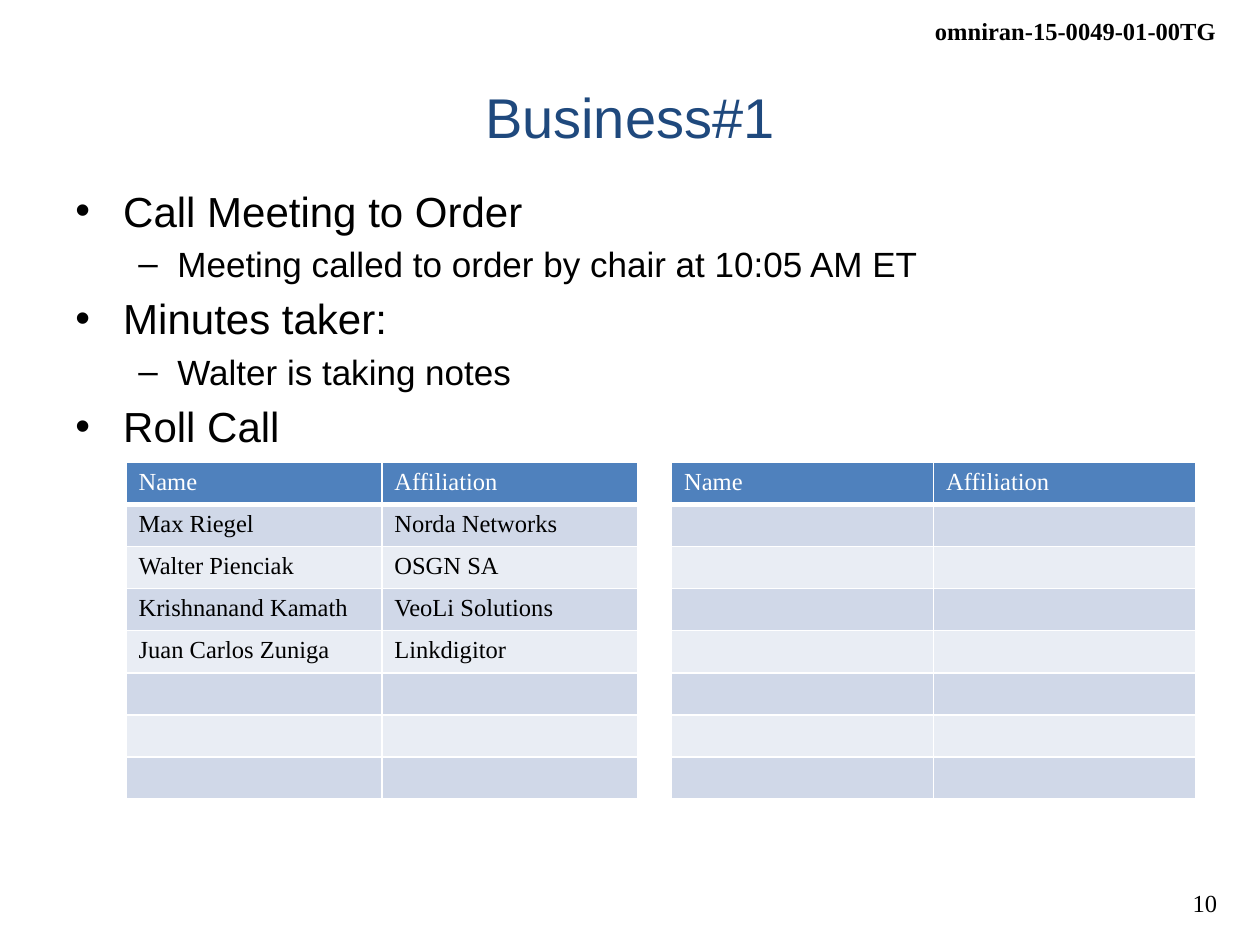
from lxml.etree import SubElement
from pptx import Presentation
from pptx.dml.color import RGBColor
from pptx.enum.text import MSO_ANCHOR, PP_ALIGN
from pptx.oxml.ns import qn
from pptx.util import Inches, Pt

SERIF, SANS = "Times New Roman", "Arial"
BLACK, WHITE, NAVY, BLUE = "000000", "FFFFFF", "1F497D", "4F81BD"
BANDS = ("D0D8E8", "E9EDF4")
LEVELS = (
    {"size": 24, "mark": "•", "left": 0.38, "hang": 0.38},
    {"size": 20, "mark": "–", "left": 0.81, "hang": 0.31},
)
AGENDA = (
    (0, "Call Meeting to Order"),
    (1, "Meeting called to order by chair at 10:05 AM ET"),
    (0, "Minutes taker:"),
    (1, "Walter is taking notes"),
    (0, "Roll Call"),
)
HEADER = ("Name", "Affiliation", "", "Name", "Affiliation")
ATTENDEES = (
    ("Max Riegel", "Norda Networks"),
    ("Walter Pienciak", "OSGN SA"),
    ("Krishnanand Kamath", "VeoLi Solutions"),
    ("Juan Carlos Zuniga", "Linkdigitor"),
)
COLUMN_WIDTHS = (2.03, 2.03, 0.27, 2.08, 2.08)
ROW_COUNT, ROW_HEIGHT, GAP_COLUMN = 8, 0.32, 2


def color(value):
    """Turn a hex string into a colour."""
    return RGBColor.from_string(value)


def write(para, text, size=14, font=SERIF, ink=BLACK, bold=False, align=PP_ALIGN.LEFT):
    """Add formatted text to a paragraph."""
    para.alignment = align
    span = para.add_run()
    span.text = text
    span.font.name, span.font.size, span.font.bold = font, Pt(size), bold
    span.font.color.rgb = color(ink)


def add_box(page, left, top, width, height, wrap=True, anchor=MSO_ANCHOR.TOP):
    """Add an empty text box and return its text frame."""
    box = page.shapes.add_textbox(Inches(left), Inches(top), Inches(width), Inches(height))
    frame = box.text_frame
    frame.word_wrap, frame.vertical_anchor = wrap, anchor
    return frame


def set_bullet(para, mark, left, hang):
    """Give a paragraph a hanging bullet and proportional space before."""
    properties = para._p.get_or_add_pPr()
    properties.set("marL", str(Inches(left)))
    properties.set("indent", str(-Inches(hang)))
    spacing = SubElement(properties, qn("a:spcBef"))
    SubElement(spacing, qn("a:spcPct"), val="20000")
    SubElement(properties, qn("a:buFont"), typeface=SANS)
    SubElement(properties, qn("a:buChar"), char=mark)


def set_borders(cell, bottom):
    """Draw white borders around a cell."""
    properties = cell._tc.get_or_add_tcPr()
    for position, (side, width) in enumerate((("L", 1), ("R", 1), ("T", 1), ("B", bottom))):
        line = SubElement(properties, qn(f"a:ln{side}"), w=str(Pt(width)))
        fill = SubElement(line, qn("a:solidFill"))
        SubElement(fill, qn("a:srgbClr"), val=WHITE)
        properties.insert(position, line)


def fill_cell(cell, text, fill, ink, bottom):
    """Format one table cell and write its text."""
    cell.fill.solid()
    cell.fill.fore_color.rgb = color(fill)
    set_borders(cell, bottom)
    para = cell.text_frame.paragraphs[0]
    if text:
        write(para, text, ink=ink)
    else:
        ending = SubElement(para._p, qn("a:endParaRPr"), sz="1400")
        SubElement(ending, qn("a:latin"), typeface=SERIF)


def add_corner_text(page, left, top, width, height, text, bold=False):
    """Place a right-aligned line in a page corner."""
    frame = add_box(page, left, top, width, height, wrap=False)
    write(frame.paragraphs[0], text, bold=bold, align=PP_ALIGN.RIGHT)


def add_title(page, left, top, width, height, text):
    """Place the centred slide title."""
    frame = add_box(page, left, top, width, height, anchor=MSO_ANCHOR.MIDDLE)
    write(frame.paragraphs[0], text, size=32, font=SANS, ink=NAVY, align=PP_ALIGN.CENTER)


def add_agenda(page, left, top, width, height):
    """Place the two-level list of agenda items."""
    frame = add_box(page, left, top, width, height)
    for index, (level, text) in enumerate(AGENDA):
        para = frame.add_paragraph() if index else frame.paragraphs[0]
        style = LEVELS[level]
        para.level = level
        set_bullet(para, style["mark"], style["left"], style["hang"])
        write(para, text, size=style["size"], font=SANS)


def add_roll_call(page, left, top, width, height):
    """Place the attendance table with its two halves."""
    shape = page.shapes.add_table(
        ROW_COUNT, len(COLUMN_WIDTHS), Inches(left), Inches(top), Inches(width), Inches(height)
    )
    table = shape.table
    for column, column_width in zip(table.columns, COLUMN_WIDTHS):
        column.width = Inches(column_width)
    content = dict(enumerate((HEADER, *ATTENDEES)))
    for index, row in enumerate(table.rows):
        row.height = Inches(ROW_HEIGHT)
        texts = content.get(index, ())
        band, ink, bottom = (BANDS[(index - 1) % 2], BLACK, 1) if index else (BLUE, WHITE, 3)
        for position, cell in enumerate(row.cells):
            text = texts[position] if position < len(texts) else ""
            fill_cell(cell, text, WHITE if position == GAP_COLUMN else band, ink, bottom)


def main():
    """Build the slide and save it."""
    deck = Presentation()
    deck.slide_width, deck.slide_height = Inches(10), Inches(7.5)
    page = deck.slides.add_slide(deck.slide_layouts[6])
    add_corner_text(page, 7.3, 0.08, 2.45, 0.34, "omniran-15-0049-01-00TG", bold=True)
    add_corner_text(page, 9.33, 7, 0.43, 0.34, "10")
    add_title(page, 0.5, 0.3, 9, 1.25, "Business#1")
    add_agenda(page, 0.5, 1.42, 9, 2.83)
    add_roll_call(page, 1, 3.67, sum(COLUMN_WIDTHS), ROW_COUNT * ROW_HEIGHT)
    deck.save("out.pptx")


if __name__ == "__main__":
    main()
